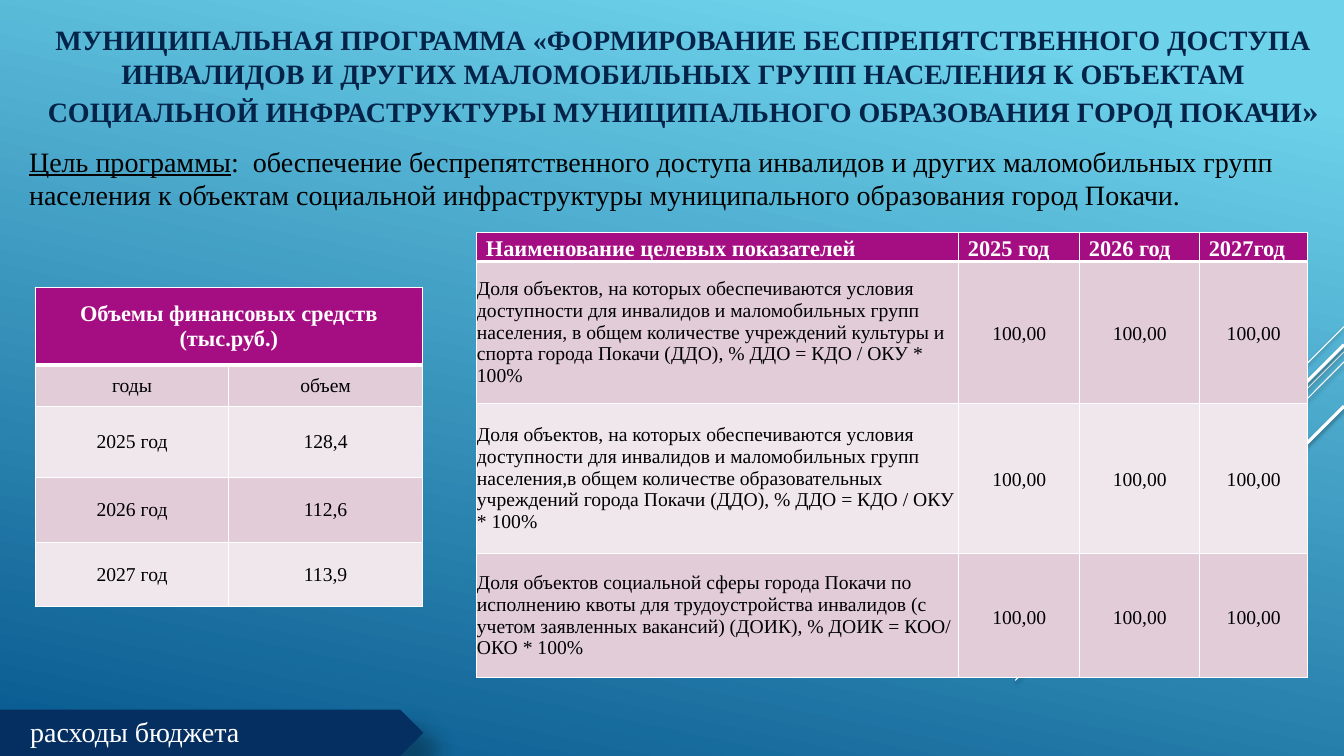
import pptx
import pptx.util
import pptx.oxml
import pptx.oxml.ns
import pptx.dml.color
import pptx.enum.text
import pptx.enum.shapes

PX = 9144  # EMU in one px, 100 px to the inch
FONT = "Times New Roman"
COLORS = {
    "sky": "6ED2EB", "sea": "06588E", "title": "042349", "navy": "052F61",
    "head": "A50E82", "dark": "E1CCD8", "light": "F0E7ED",
    "white": "FFFFFF", "black": "000000",
}
Pt = pptx.util.Pt
RGB = {name: pptx.dml.color.RGBColor.from_string(code) for name, code in COLORS.items()}
ALIGN = pptx.enum.text.PP_ALIGN
ANCHOR = pptx.enum.text.MSO_ANCHOR
SHAPE = pptx.enum.shapes.MSO_SHAPE
NS = pptx.oxml.ns.nsdecls("a")


def style(run, size, color, bold=False):
    font = run.font
    font.name, font.size, font.bold = FONT, Pt(size), bold
    font.color.rgb = RGB[color]


def shade(shape, alpha, blur, dist, angle):
    shape._element.spPr.append(pptx.oxml.parse_xml(
        f'<a:effectLst {NS}><a:outerShdw blurRad="{Pt(blur)}" dist="{Pt(dist)}" '
        f'dir="{angle * 60000}" algn="tl" rotWithShape="0"><a:srgbClr val="{COLORS["black"]}">'
        f'<a:alpha val="{alpha * 1000}"/></a:srgbClr></a:outerShdw></a:effectLst>'))


deck = pptx.Presentation()
deck.slide_width, deck.slide_height = 1333 * PX, 750 * PX
slide = deck.slides.add_slide(deck.slide_layouts[6])
shapes = slide.shapes

# Background
back = slide.background.fill
back.gradient()
back.gradient_angle = 258
for stop, color, place in zip(back.gradient_stops, ("sky", "sea"), (0.1, 1)):
    stop.color.rgb = RGB[color]
    stop.position = place

# Diagonal lines from the right edge: start y, end x, end y, width
for top, left, low, width in [
    (324, 1233, 424, 0.75), (349, 1007, 675, 0.75), (359, 1126, 567, 0.75),
    (342, 1142, 533, 2.25), (403, 1194, 542, 2.25),
]:
    line = shapes.add_connector(pptx.enum.shapes.MSO_CONNECTOR.STRAIGHT,
                                1333 * PX, top * PX, left * PX, low * PX)
    line.line.color.rgb = RGB["white"]
    line.line.width = Pt(width)
    shade(line, 38, 3.1, 1.6, 90)

# Tables: place, columns, rows, text
share = "Доля объектов, на которых обеспечиваются условия доступности для инвалидов и маломобильных групп населения,"
full = ["100,00"] * 3
money = (35, 285, [192, 192], [77, 41, 71, 64, 64], [
    ["Объемы финансовых средств (тыс.руб.)", ""],
    ["годы", "объем"],
    ["2025 год", "128,4"],
    ["2026 год", "112,6"],
    ["2027 год", "113,9"],
])
goals = (473, 231, [478, 120, 119, 107], [27, 141, 149, 123], [
    ["Наименование целевых показателей", "2025 год", "2026 год", "2027год"],
    [share + " в общем количестве учреждений культуры и спорта города Покачи (ДДО), % ДДО = КДО / ОКУ * 100%"] + full,
    [share + "в общем количестве образовательных учреждений города Покачи (ДДО), % ДДО = КДО / ОКУ * 100%"] + full,
    ["Доля объектов социальной сферы города Покачи по исполнению квоты для трудоустройства инвалидов "
     "(с учетом заявленных вакансий) (ДОИК), % ДОИК = КОО/ ОКО * 100%"] + full,
])
for spec in (money, goals):
    left, top, cols, rows, data = spec
    wide = spec is goals
    table = shapes.add_table(len(rows), len(cols), left * PX, top * PX,
                             sum(cols) * PX, sum(rows) * PX).table
    for col, width in zip(table.columns, cols):
        col.width = width * PX
    for row, height in zip(table.rows, rows):
        row.height = height * PX
    if not wide:
        table.cell(0, 0).merge(table.cell(0, 1))
    for r, words in enumerate(data):
        for c, word in enumerate(words):
            cell = table.cell(r, c)
            head = r == 0
            prose = wide and c == 0 and not head

            # Borders, with a thick rule under the header
            props = cell._tc.get_or_add_tcPr()
            for side in "LRTB":
                thick = (r, side) in [(0, "B"), (1, "T")]
                props.append(pptx.oxml.parse_xml(
                    f'<a:ln{side} {NS} w="{Pt(3 if thick else 1)}"><a:solidFill>'
                    f'<a:srgbClr val="{COLORS["white"]}"/></a:solidFill></a:ln{side}>'))
            cell.fill.solid()
            cell.fill.fore_color.rgb = RGB["head" if head else "dark" if r % 2 else "light"]

            # Margins and text
            cell.margin_left = cell.margin_right = (0 if prose else 7 if wide else 13) * PX
            cell.margin_top = cell.margin_bottom = (0 if wide else 5) * PX
            cell.vertical_anchor = ANCHOR.BOTTOM if wide and head else ANCHOR.MIDDLE
            if not word:
                continue
            cell.text_frame.text = word
            para = cell.text_frame.paragraphs[0]
            para.alignment = ALIGN.LEFT if prose or wide and head else ALIGN.CENTER
            if wide and not prose:
                para.line_spacing = 1.15
                para.space_after = Pt(10)
            if wide and head:
                para._p.get_or_add_pPr().set("indent", str(2 * PX))
            style(para.runs[0], 16 if head else 14, "white" if head else "black", head)

# Footer tag
tag = shapes.add_shape(SHAPE.PENTAGON, 0, 704 * PX, 420 * PX, 46 * PX)
tag.fill.solid()
tag.fill.fore_color.rgb = RGB["navy"]
tag.line.fill.background()
shade(tag, 30, 15, 18, 45)

# Title, aim and footer text: place, runs, color
title = ("МУНИЦИПАЛЬНАЯ ПРОГРАММА «ФОРМИРОВАНИЕ БЕСПРЕПЯТСТВЕННОГО ДОСТУПА ИНВАЛИДОВ И ДРУГИХ "
         "МАЛОМОБИЛЬНЫХ ГРУПП НАСЕЛЕНИЯ К ОБЪЕКТАМ СОЦИАЛЬНОЙ ИНФРАСТРУКТУРЫ МУНИЦИПАЛЬНОГО "
         "ОБРАЗОВАНИЯ ГОРОД ПОКАЧИ")
aim = (":  обеспечение беспрепятственного доступа инвалидов и других маломобильных групп населения "
       "к объектам социальной инфраструктуры муниципального образования город Покачи.")
for place, words, color in [
    ((22, 12, 1311, 126), [title, "»"], "title"),
    ((19, 138, 1296, 77), ["Цель программы", aim], "black"),
    ((20, 704, 378, 44), ["расходы бюджета"], "white"),
]:
    frame = shapes.add_textbox(*(n * PX for n in place)).text_frame
    frame.word_wrap = True
    para = frame.paragraphs[0]
    for word in words:
        run = para.add_run()
        run.text = word
        style(run, 23 if word == "»" else 20, color, color == "title")
    if color == "title":
        frame.vertical_anchor = ANCHOR.MIDDLE
        para.alignment = ALIGN.CENTER
    else:
        frame.auto_size = pptx.enum.text.MSO_AUTO_SIZE.SHAPE_TO_FIT_TEXT
    if color == "black":
        para.runs[0].font.underline = True

deck.save("out.pptx")
